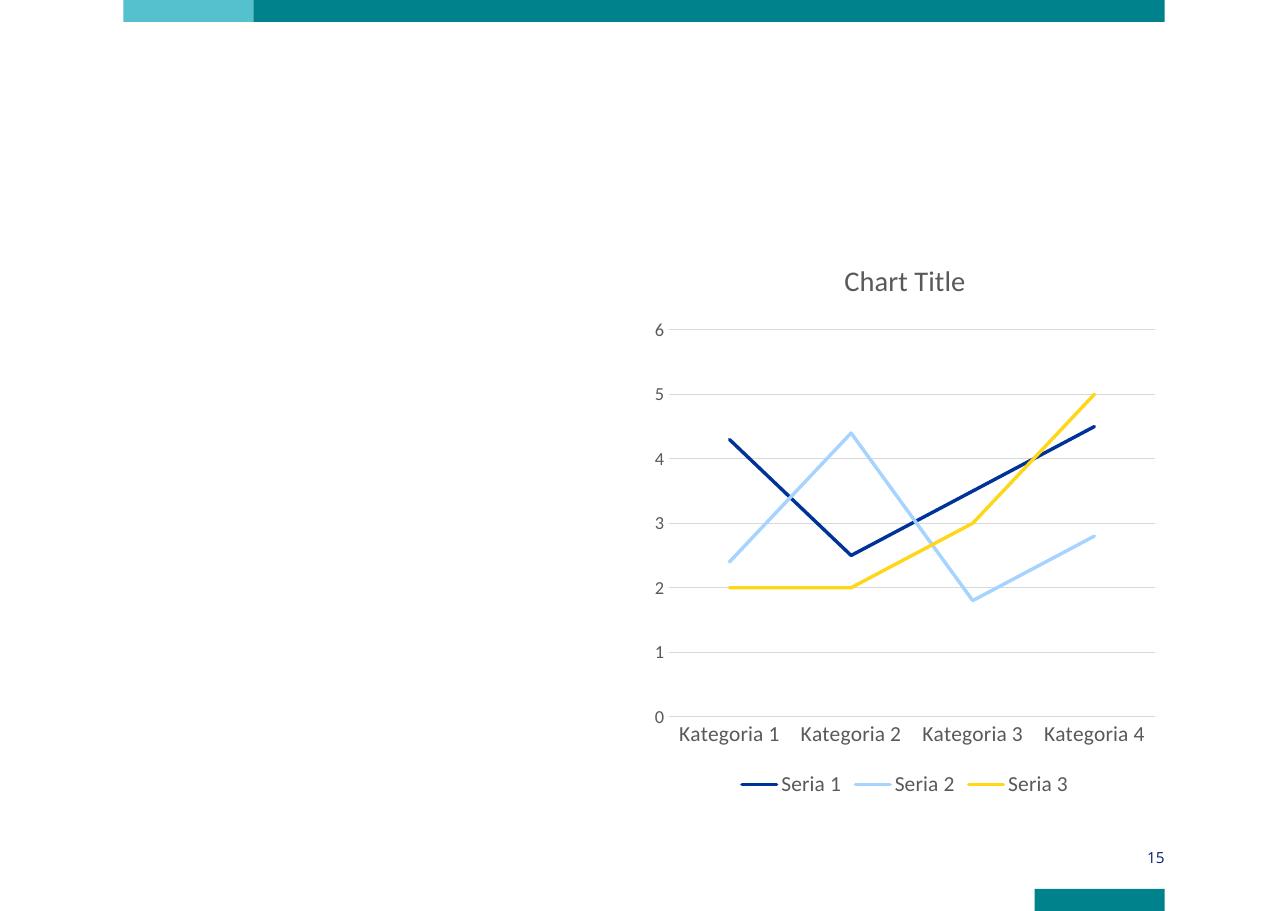
from pptx import Presentation
from pptx import util as u
from pptx.chart.data import CategoryChartData
from pptx.dml.color import RGBColor
from pptx.enum import chart as ch, shapes, text

TEAL = RGBColor(0x00, 0x82, 0x8C)
AQUA = RGBColor(0x55, 0xC0, 0xCE)
NAVY = RGBColor(0x00, 0x20, 0x73)
GRAY = RGBColor(0x59, 0x59, 0x59)
GRID = RGBColor(0xD9, 0xD9, 0xD9)
BLUE = RGBColor(0x00, 0x33, 0x99)
SKY = RGBColor(0xA6, 0xD3, 0xFF)
GOLD = RGBColor(0xFF, 0xD6, 0x18)
PX = 9144


def write(frame, words, size, color, face="Calibri", align=None):
    para = frame.paragraphs[0]
    para.alignment = align
    run = para.add_run()
    run.text = words
    run.font.size = u.Pt(size)
    run.font.name = face
    run.font.bold = False
    run.font.color.rgb = color


deck = Presentation()
deck.slide_width, deck.slide_height = 1169 * PX, 827 * PX
slide = deck.slides.add_slide(deck.slide_layouts[6])

bars = [(112, 0, 118, AQUA), (230, 0, 827, TEAL), (939, 807, 118, TEAL)]
for left, top, width, color in bars:
    bar = slide.shapes.add_shape(
        shapes.MSO_SHAPE.RECTANGLE, left * PX, top * PX, width * PX, 20 * PX)
    bar.shadow.inherit = False
    bar.fill.solid()
    bar.fill.fore_color.rgb = color
    bar.line.fill.background()

data = CategoryChartData()
data.categories = [f"Kategoria {n}" for n in range(1, 5)]
rows = [(4.3, 2.5, 3.5, 4.5), (2.4, 4.4, 1.8, 2.8), (2, 2, 3, 5)]
for n, row in enumerate(rows, 1):
    data.add_series(f"Seria {n}", row)
chart = slide.shapes.add_chart(
    ch.XL_CHART_TYPE.LINE, 585 * PX, 216 * PX, 473 * PX, 512 * PX, data).chart
chart.font.name = "Calibri"
chart.font.size = u.Pt(14)
chart.font.color.rgb = GRAY
chart.has_title = True
write(chart.chart_title.text_frame, "Chart Title", 18.6, GRAY)
chart.chart_title.include_in_layout = False

chart.has_legend = True
chart.legend.position = ch.XL_LEGEND_POSITION.BOTTOM
chart.legend.include_in_layout = False

plot = chart.plots[0]
plot.vary_by_categories = False
for line, color in zip(plot.series, (BLUE, SKY, GOLD)):
    line.smooth = False
    line.marker.style = ch.XL_MARKER_STYLE.NONE
    line.format.line.color.rgb = color
    line.format.line.width = u.Pt(2.25)
    line.format.line._get_or_add_ln().set("cap", "rnd")

cats, vals = chart.category_axis, chart.value_axis
for axis, size in ((cats, 14), (vals, 12)):
    axis.major_tick_mark = axis.minor_tick_mark = ch.XL_TICK_MARK.NONE
    axis.tick_labels.font.size = u.Pt(size)
vals.minimum_scale, vals.maximum_scale, vals.major_unit = 0, 6, 1
vals.has_major_gridlines = True
vals.format.line.fill.background()
for rule in (cats.format.line, vals.major_gridlines.format.line):
    rule.color.rgb = GRID
    rule.width = u.Pt(0.75)

page = slide.shapes.add_textbox(939 * PX, 768 * PX, 118 * PX, 20 * PX).text_frame
page.word_wrap = True
page.vertical_anchor = text.MSO_ANCHOR.MIDDLE
page.margin_left = page.margin_right = 0
page.margin_top = page.margin_bottom = 8 * PX
write(page, "15", 10, NAVY, face="Open Sans", align=text.PP_ALIGN.RIGHT)

deck.save("out.pptx")
